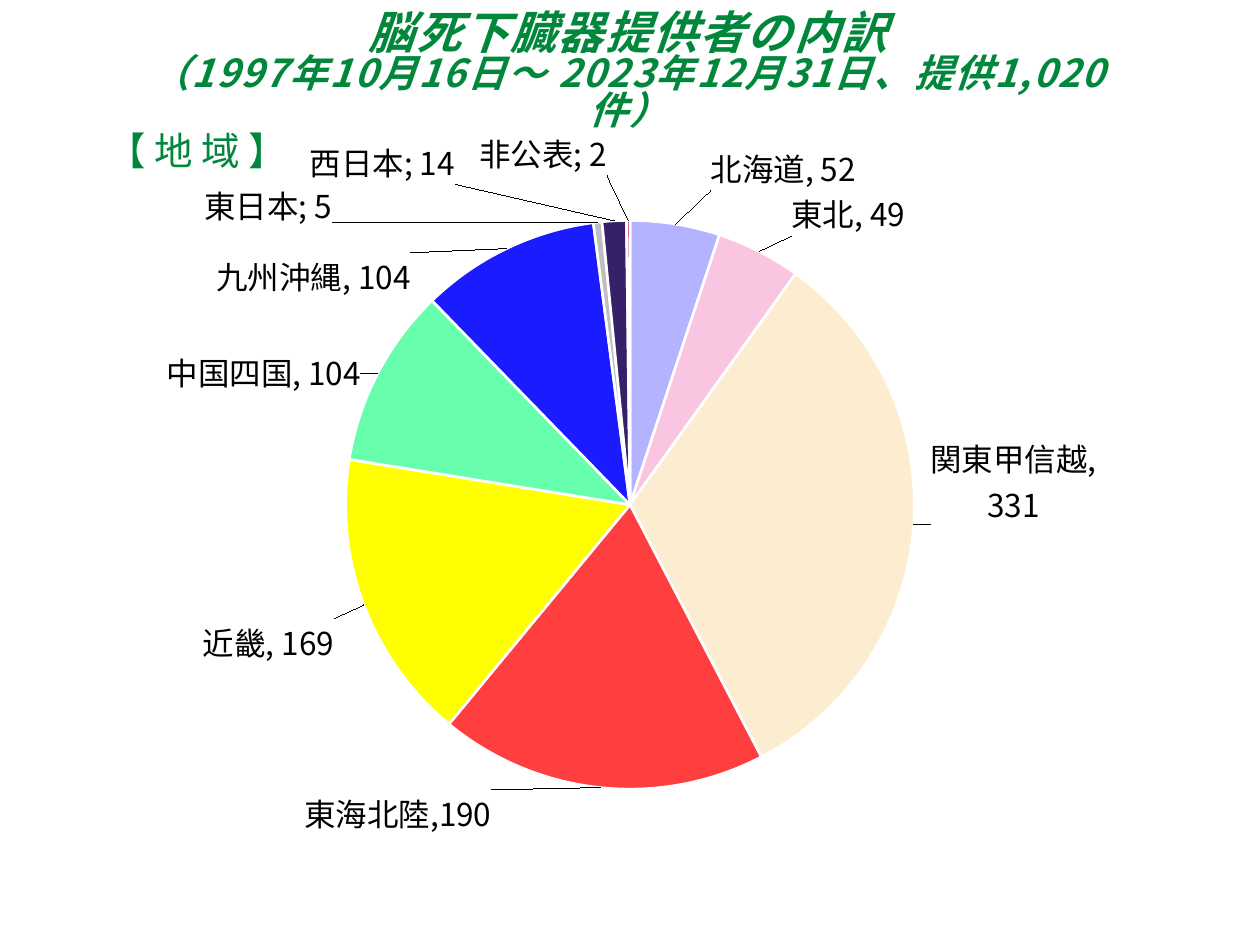
"""Build the slide of brain-dead organ donors by region as a pie chart."""
from dataclasses import dataclass

from lxml.etree import SubElement
from pptx import Presentation
from pptx.chart.chart import Chart
from pptx.chart.data import CategoryChartData
from pptx.dml.color import RGBColor
from pptx.enum.chart import XL_CHART_TYPE, XL_LABEL_POSITION
from pptx.enum.text import MSO_ANCHOR, PP_ALIGN
from pptx.oxml import parse_xml
from pptx.oxml.ns import nsdecls, qn
from pptx.util import Emu, Pt

PX = 914400 / 126
GREEN = RGBColor(0x00, 0x87, 0x3C)
BLACK = RGBColor(0x00, 0x00, 0x00)
WHITE = RGBColor(0xFF, 0xFF, 0xFF)
JP_FONT = "Noto Sans CJK JP"


@dataclass(frozen=True)
class Box:
    left: int
    top: int
    width: int
    height: int

    def emu(self) -> tuple[Emu, ...]:
        return tuple(px(n) for n in (self.left, self.top, self.width, self.height))


@dataclass(frozen=True)
class Region:
    name: str
    donors: int
    color: RGBColor
    dx: int
    dy: int
    label: str = ""


CHART = Box(111, 127, 1038, 728)
TITLE = Box(127, 18, 1004, 110)
HEADING = Box(95, 121, 378, 59)
PLOT = {"x": 0.226, "y": 0.109, "w": 0.548, "h": 0.82}
REGIONS = [
    Region("北海道", 52, RGBColor(0xB3, 0xB3, 0xFF), 34, -26, "北海道, 52"),
    Region("東北", 49, RGBColor(0xFA, 0xC5, 0xE0), 29, -9, "東北, 49"),
    Region("関東甲信越", 331, RGBColor(0xFC, 0xED, 0xD1), 9, -45, "関東甲信越,\n331"),
    Region("東海北陸", 190, RGBColor(0xFF, 0x3F, 0x3F), -108, -5, "東海北陸,190"),
    Region("近畿", 169, RGBColor(0xFF, 0xFF, 0x00), -23, 11, "近畿, 169"),
    Region("中国四国", 104, RGBColor(0x67, 0xFF, 0xAD), -10, 25, "中国四国, 104"),
    Region("九州沖縄", 104, RGBColor(0x1B, 0x1B, 0xFF), -92, 57, "九州沖縄, 104"),
    Region("東日本", 5, RGBColor(0xBF, 0xBF, 0xBF), -265, 13),
    Region("西日本", 14, RGBColor(0x36, 0x21, 0x69), -231, -29),
    Region("非公表", 2, RGBColor(0xB4, 0x0F, 0x64), -85, -37),
]


def px(n: int) -> Emu:
    return Emu(round(n * PX))


def manual_layout(values: dict[str, float], inner: bool = False):
    layout = parse_xml(f"<c:layout {nsdecls('c')}><c:manualLayout/></c:layout>")
    if inner:
        SubElement(layout[0], qn("c:layoutTarget")).set("val", "inner")
        for key in "xy":
            SubElement(layout[0], qn(f"c:{key}Mode")).set("val", "edge")
    for key, value in values.items():
        SubElement(layout[0], qn(f"c:{key}")).set("val", f"{value:.3f}")
    return layout


def style_point(point, region: Region) -> None:
    point.format.fill.solid()
    point.format.fill.fore_color.rgb = region.color
    point.format.line.color.rgb = WHITE
    point.format.line.width = Pt(1.5)
    label = point.data_label
    if region.label:
        tf = label.text_frame
        tf.text = region.label
        for p in tf.paragraphs:
            for r in p.runs:
                r.font.size = Pt(18)
    else:
        label.font.size = Pt(18)
    label.position = XL_LABEL_POSITION.OUTSIDE_END


def place_labels(chart: Chart) -> None:
    for label, region in zip(chart.element.xpath(".//c:dLbl"), REGIONS):
        for old in label.findall(qn("c:layout")):
            label.remove(old)
        offset = {"x": region.dx / CHART.width, "y": region.dy / CHART.height}
        label.find(qn("c:idx")).addnext(manual_layout(offset))
        label.find(qn("c:showCatName")).set("val", "1")
        separator = parse_xml(f"<c:separator {nsdecls('c')}>; </c:separator>")
        label.find(qn("c:showBubbleSize")).addnext(separator)


def add_pie(s) -> None:
    data = CategoryChartData()
    data.categories = [region.name for region in REGIONS]
    data.add_series("Series 1", [region.donors for region in REGIONS])
    chart = s.shapes.add_chart(XL_CHART_TYPE.PIE, *CHART.emu(), data).chart
    chart.has_title = False
    chart.has_legend = False
    chart.font.name = JP_FONT
    chart.font.size = Pt(10)
    chart.font.color.rgb = BLACK
    plot = chart.plots[0]
    plot.vary_by_categories = True
    series = plot.series[0]
    labels = series.data_labels
    labels.show_value = True
    labels.show_category_name = True
    labels.position = XL_LABEL_POSITION.OUTSIDE_END
    labels.font.size = Pt(18)
    for i, region in enumerate(REGIONS):
        style_point(series.points[i], region)
    place_labels(chart)
    area = chart.element.find(".//" + qn("c:plotArea"))
    for old in area.findall(qn("c:layout")):
        area.remove(old)
    area.insert(0, manual_layout(PLOT, inner=True))


def add_text(s, box: Box, font: str):
    tf = s.shapes.add_textbox(*box.emu()).text_frame
    tf.word_wrap = True
    p = tf.paragraphs[0]
    p.font.name = font
    p.font.color.rgb = GREEN
    return tf, p


def add_title(s) -> None:
    tf, p = add_text(s, TITLE, JP_FONT)
    tf.vertical_anchor = MSO_ANCHOR.MIDDLE
    p.alignment = PP_ALIGN.CENTER
    p.line_spacing = 0.8
    p.font.bold = True
    p.font.italic = True
    lines = [
        ("脳死下臓器提供者の内訳", 26),
        ("（1997年10月16日～ 2023年12月31日、提供1,020件）", 22),
    ]
    for i, (text, size) in enumerate(lines):
        if i:
            p.add_line_break()
        r = p.add_run()
        r.text = text
        r.font.size = Pt(size)
        r._r.get_or_add_rPr().set("spc", "100")


def main() -> None:
    prs = Presentation()
    prs.slide_width, prs.slide_height = px(1260), px(945)
    s = prs.slides.add_slide(prs.slide_layouts[6])
    add_pie(s)
    add_title(s)
    _, p = add_text(s, HEADING, "Arial")
    p.text = "【 地 域 】"
    p.font.size = Pt(22)
    prs.save("out.pptx")


if __name__ == "__main__":
    main()
